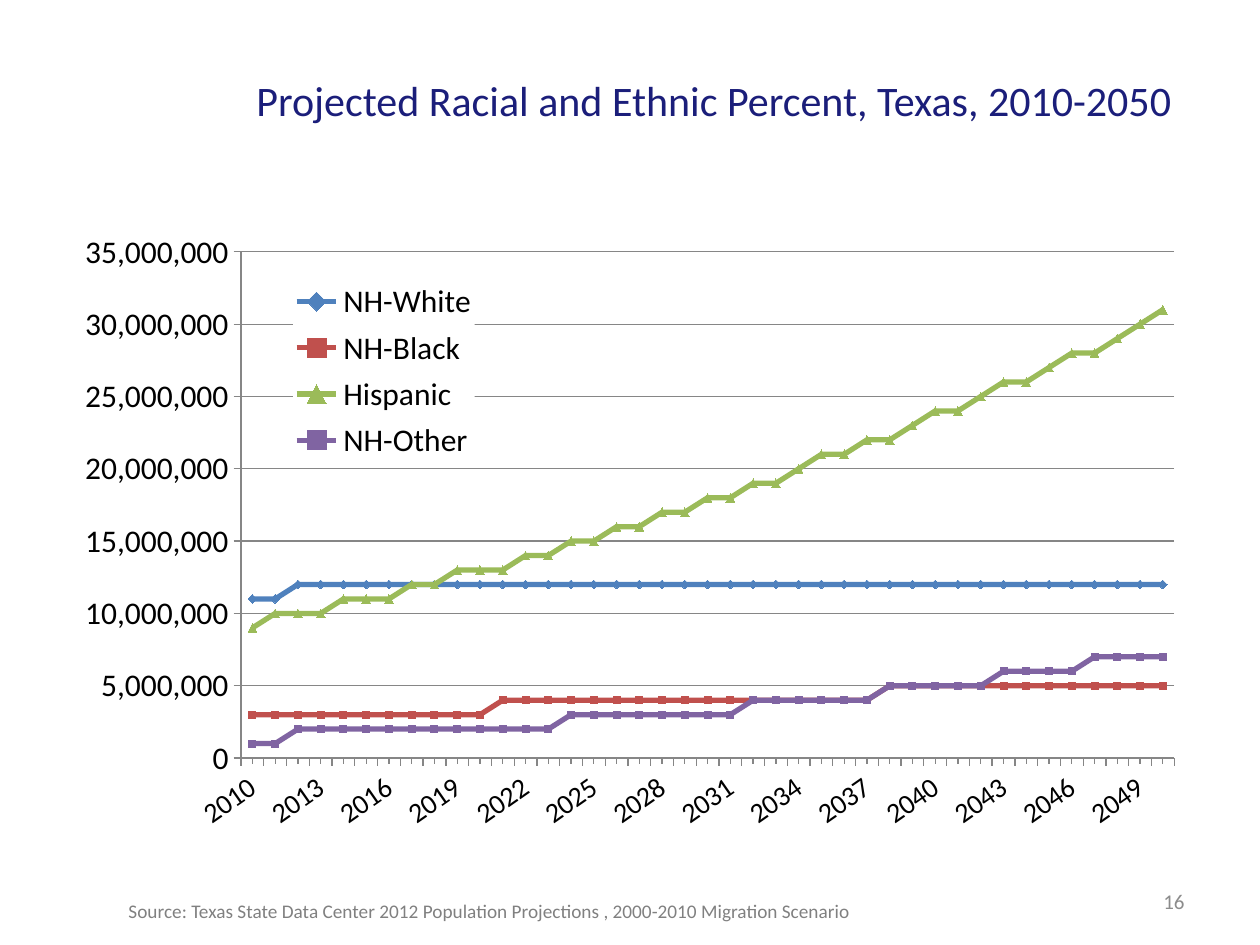
import lxml.etree
import pptx
import pptx.chart.data
import pptx.enum.chart
import pptx.enum.text
import pptx.oxml
import pptx.oxml.ns
import pptx.util

Cm, Pt = pptx.util.Cm, pptx.util.Pt
RGB = pptx.dml.color.RGBColor.from_string
ALIGN = pptx.enum.text.PP_ALIGN
ANCHOR = pptx.enum.text.MSO_ANCHOR
MARK = pptx.enum.chart.XL_MARKER_STYLE
TICK = pptx.enum.chart.XL_TICK_MARK
qn = pptx.oxml.ns.qn

FONT = "Calibri"
COLORS = {
    "title": "1B1E7A", "text": "000000", "note": "808080", "page": "8C8C8C",
    "grid": "868686", "back": "FFFFFF", "white": "4F81BD", "black": "C0504D",
    "hisp": "9BBB59", "other": "8064A2",
}
YEARS = range(2010, 2051)
MILLION = 1_000_000
# Name, colour, marker, marker size, millions of people for each year
SERIES = [
    ("NH-White", "white", MARK.DIAMOND, 5, [11] * 2 + [12] * 39),
    ("NH-Black", "black", MARK.SQUARE, 4, [3] * 11 + [4] * 17 + [5] * 13),
    ("Hispanic", "hisp", MARK.TRIANGLE, 5,
     [9, 10, 10, 10, 11, 11, 11, 12, 12, 13, 13, 13, 14, 14,
      15, 15, 16, 16, 17, 17, 18, 18, 19, 19, 20, 21, 21, 22,
      22, 23, 24, 24, 25, 26, 26, 27, 28, 28, 29, 30, 31]),
    ("NH-Other", "other", MARK.SQUARE, 4,
     [1] * 2 + [2] * 12 + [3] * 8 + [4] * 6 + [5] * 5 + [6] * 4 + [7] * 4),
]


def style(font, size, color):
    font.name, font.size = FONT, Pt(size)
    font.color.rgb = RGB(COLORS[color])


def fill_text(shape, text, size, color, align, anchor):
    frame = shape.text_frame
    frame.word_wrap = True
    frame.vertical_anchor = anchor
    para = frame.paragraphs[0]
    para.text, para.alignment = text, align
    style(para.font, size, color)
    return para


def add_title(slide, box):
    shape = slide.shapes.title
    shape.left, shape.top, shape.width, shape.height = map(Cm, box)
    fill_text(shape, "Projected Racial and Ethnic Percent, Texas, 2010-2050",
              24, "title", ALIGN.CENTER, ANCHOR.MIDDLE)


def set_layout(part, spot, box, inner=False):
    """Fix a chart part at fractions of the chart area."""
    for old in part.findall(qn("c:layout")):
        part.remove(old)
    layout = lxml.etree.Element(qn("c:layout"))
    manual = lxml.etree.SubElement(layout, qn("c:manualLayout"))
    pairs = [("layoutTarget", "inner")] if inner else []
    pairs += [("xMode", "edge"), ("yMode", "edge"), *zip("xywh", box)]
    for tag, val in pairs:
        lxml.etree.SubElement(manual, qn("c:" + tag)).set("val", str(val))
    part.insert(spot, layout)


def add_legend(chart):
    chart.has_legend = True
    legend = chart.legend
    legend.position = pptx.enum.chart.XL_LEGEND_POSITION.LEFT
    legend.include_in_layout = True
    style(legend.font, 18, "text")
    node = legend._element
    set_layout(node, 1, (0.203, 0.086, 0.16, 0.31))
    back = pptx.oxml.parse_xml(
        f'<c:spPr {pptx.oxml.ns.nsdecls("c", "a")}><a:solidFill>'
        f'<a:srgbClr val="{COLORS["back"]}"/></a:solidFill></c:spPr>')
    node.find(qn("c:txPr")).addprevious(back)


def style_axes(chart):
    years, people = chart.category_axis, chart.value_axis
    for axis, size in ((years, 16), (people, 18)):
        style(axis.tick_labels.font, size, "text")
        axis.major_tick_mark = TICK.OUTSIDE
        axis.format.line.color.rgb = RGB(COLORS["grid"])
    years.minor_tick_mark = TICK.OUTSIDE
    turn = years._element.find(qn("c:txPr")).find(qn("a:bodyPr"))
    turn.set("rot", str(-35 * 60000))
    turn.set("vert", "horz")
    people.minimum_scale, people.maximum_scale = 0, 35 * MILLION
    people.major_unit = 5 * MILLION
    people.tick_labels.number_format = "#,##0"
    people.tick_labels.number_format_is_linked = False
    people.has_major_gridlines = True
    people.major_gridlines.format.line.color.rgb = RGB(COLORS["grid"])


def add_lines(slide, box):
    data = pptx.chart.data.CategoryChartData(number_format="#,##0")
    data.categories = [str(year) for year in YEARS]
    for name, *_, vals in SERIES:
        data.add_series(name, [val * MILLION for val in vals])
    kind = pptx.enum.chart.XL_CHART_TYPE.LINE_MARKERS
    chart = slide.shapes.add_chart(kind, *map(Cm, box), data).chart
    chart.has_title = False
    style(chart.font, 18, "text")
    chart.plots[0].vary_by_categories = False
    for line, (_, color, mark, size, _) in zip(chart.plots[0].series, SERIES):
        rgb = RGB(COLORS[color])
        line.smooth = False
        line.format.line.width = Pt(3)
        line.format.line.color.rgb = rgb
        line.marker.style, line.marker.size = mark, size
        line.marker.format.fill.solid()
        line.marker.format.fill.fore_color.rgb = rgb
        line.marker.format.line.color.rgb = rgb
    style_axes(chart)
    area = chart._chartSpace.chart.plotArea
    set_layout(area, 0, (0.157, 0.05, 0.823, 0.812), inner=True)
    add_legend(chart)


def add_page(slide, box):
    shape = slide.shapes.add_textbox(*map(Cm, box))
    fill_text(shape, "16", 12, "page", ALIGN.RIGHT, ANCHOR.MIDDLE)


def add_source(slide, box):
    shape = slide.shapes.add_textbox(*map(Cm, box))
    para = fill_text(
        shape, "Source: Texas State Data Center 2012 Population Projections , "
        "2000-2010 Migration Scenario", 11, "note", ALIGN.LEFT, ANCHOR.TOP)
    props = para._p.get_or_add_pPr()
    props.set("marL", str(Cm(2.2)))
    props.set("indent", str(Cm(-2.2)))


def main():
    deck = pptx.Presentation()
    deck.slide_width, deck.slide_height = Cm(25.4), Cm(19.05)
    slide = deck.slides.add_slide(deck.slide_layouts[5])
    add_title(slide, (4.45, 0.64, 19.89, 2.74))
    add_lines(slide, (1.27, 4.45, 22.86, 12.57))
    add_page(slide, (18.21, 17.65, 5.92, 1.02))
    add_source(slide, (2.34, 18, 24.33, 0.74))
    deck.save("out.pptx")


if __name__ == "__main__":
    main()
